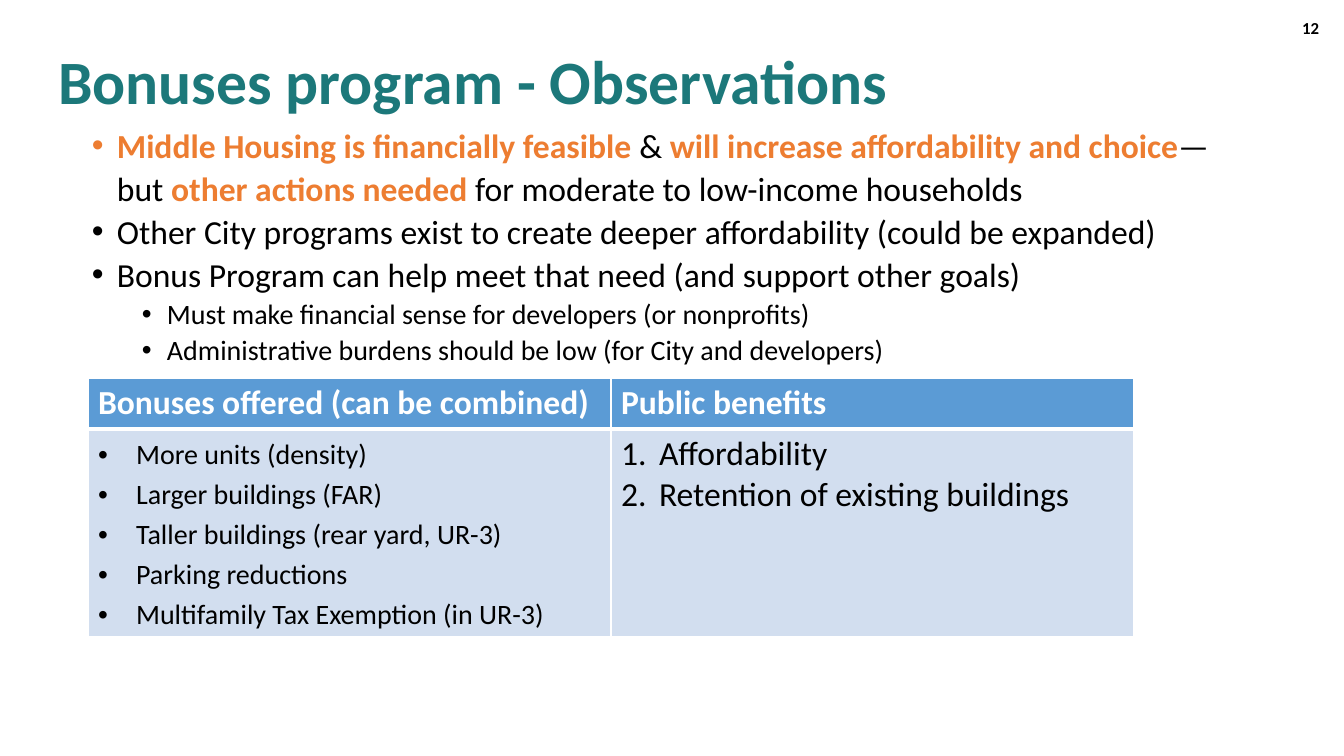
from lxml import etree
from pptx import Presentation
from pptx import util as u
from pptx.dml.color import RGBColor
from pptx.enum import text
from pptx.oxml.ns import qn

PX = 914400 / 100.8
FONT = "Calibri"
COLORS = {
    "title": "1C787A",
    "accent": "ED7D31",
    "ink": "000000",
    "white": "FFFFFF",
    "header": "5B9BD5",
    "body": "D2DEEF",
}

OBSERVATIONS = [
    ([("Middle Housing is financially feasible ", True), ("& ", False),
      ("will increase affordability and choice", True), ("—but ", False),
      ("other actions needed ", True),
      ("for moderate to low-income households", False)], 0),
    ([("Other City programs exist to create deeper affordability\u00a0(could be expanded)\u00a0", False)], 0),
    ([("Bonus Program can help meet that need (and support other goals)", False)], 0),
    ([("Must make financial sense for developers (or nonprofits)", False)], 1),
    ([("Administrative burdens should be low (for City and developers)", False)], 1),
]
HEADINGS = ["Bonuses offered (can be combined)", "Public benefits"]
BONUSES = [
    "More units (density)",
    "Larger buildings (FAR)",
    "Taller buildings (rear yard, UR-3)",
    "Parking reductions",
    "Multifamily Tax Exemption (in UR-3)",
]
BENEFITS = ["Affordability", "Retention of existing buildings"]


def px(length):
    return u.Emu(round(length * PX))


def rgb(name):
    return RGBColor.from_string(COLORS[name])


def set_bullet(paragraph, marker, left, hanging):
    """Hang a bullet character, or an automatic number for the marker '1.'."""
    props = paragraph._p.get_or_add_pPr()
    props.set("marL", str(px(left)))
    props.set("indent", str(-px(hanging)))
    if marker == "1.":
        etree.SubElement(props, qn("a:buFont"), typeface="+mj-lt")
        etree.SubElement(props, qn("a:buAutoNum"), type="arabicPeriod")
    else:
        etree.SubElement(props, qn("a:buFont"), typeface="Arial")
        etree.SubElement(props, qn("a:buChar"), char=marker)


def write(frame, runs, size, color="ink", bold=False, align="LEFT", spacing=1.0,
          after=0, marker=None, left=0, hanging=0, first=True):
    """Write one paragraph; runs is a string or (text, highlighted) pairs."""
    paragraph = frame.paragraphs[0] if first else frame.add_paragraph()
    if marker:
        set_bullet(paragraph, marker, left, hanging)
    paragraph.alignment = getattr(text.PP_ALIGN, align)
    paragraph.line_spacing = spacing
    paragraph.space_before = u.Pt(0)
    paragraph.space_after = u.Pt(after)
    for words, highlighted in [(runs, False)] if isinstance(runs, str) else runs:
        run = paragraph.add_run()
        run.text = words
        run.font.name = FONT
        run.font.size = u.Pt(size)
        run.font.bold = bold or highlighted
        run.font.color.rgb = rgb("accent" if highlighted else color)


def add_frame(slide, box, anchor="TOP"):
    frame = slide.shapes.add_textbox(*map(px, box)).text_frame
    frame.word_wrap = True
    frame.vertical_anchor = getattr(text.MSO_ANCHOR, anchor)
    return frame


def place_title(slide, box):
    title = slide.shapes.title
    title.left, title.top, title.width, title.height = map(px, box)
    frame = title.text_frame
    frame.word_wrap = True
    frame.auto_size = text.MSO_AUTO_SIZE.NONE
    frame.vertical_anchor = text.MSO_ANCHOR.MIDDLE
    write(frame, "Bonuses program - Observations", 44, "title", bold=True, spacing=0.9)


def place_page_number(slide, box):
    write(add_frame(slide, box, "MIDDLE"), "12", 12, bold=True, align="RIGHT")


def place_observations(slide, box):
    frame = add_frame(slide, box)
    for index, (runs, level) in enumerate(OBSERVATIONS):
        is_last = index == len(OBSERVATIONS) - 1
        write(frame, runs, 20 if level else 24, spacing=1.07, after=8 if is_last else 0,
              marker="•", left=25 + 50 * level, hanging=25, first=index == 0)


def style_cell(cell, fill, top, bottom):
    """Give a cell white borders, with top and bottom widths in points, and a fill."""
    props = cell._tc.get_or_add_tcPr()
    for side, width in zip("LRTB", (1, 1, top, bottom)):
        line = etree.SubElement(props, qn(f"a:ln{side}"), w=str(u.Pt(width)))
        solid = etree.SubElement(line, qn("a:solidFill"))
        etree.SubElement(solid, qn("a:srgbClr"), val=COLORS["white"])
    cell.fill.solid()
    cell.fill.fore_color.rgb = rgb(fill)


def place_bonus_table(slide, box, header_height):
    table = slide.shapes.add_table(2, 2, *map(px, box)).table
    table.rows[0].height = px(header_height)
    table.rows[1].height = px(box[3] - header_height)
    for column, heading in enumerate(HEADINGS):
        header, body = table.cell(0, column), table.cell(1, column)
        style_cell(header, "header", 1, 3)
        style_cell(body, "body", 3, 1)
        write(header.text_frame, heading, 24, "white", bold=True)
    for index, bonus in enumerate(BONUSES):
        write(table.cell(1, 0).text_frame, bonus, 20, spacing=1.17 if index else 1.1,
              marker="•", left=38, hanging=38, first=index == 0)
    for index, benefit in enumerate(BENEFITS):
        write(table.cell(1, 1).text_frame, benefit, 24, marker="1.",
              left=38, hanging=38, first=index == 0)


def main():
    deck = Presentation()
    deck.slide_width, deck.slide_height = px(1344), px(756)
    slide = deck.slides.add_slide(deck.slide_layouts[5])
    place_title(slide, (48, 12, 1159, 146))
    place_page_number(slide, (1027, 8, 302, 40))
    place_observations(slide, (82, 117, 1174, 522))
    place_bonus_table(slide, (88, 378, 1046, 259), header_height=51)
    deck.save("out.pptx")


if __name__ == "__main__":
    main()
